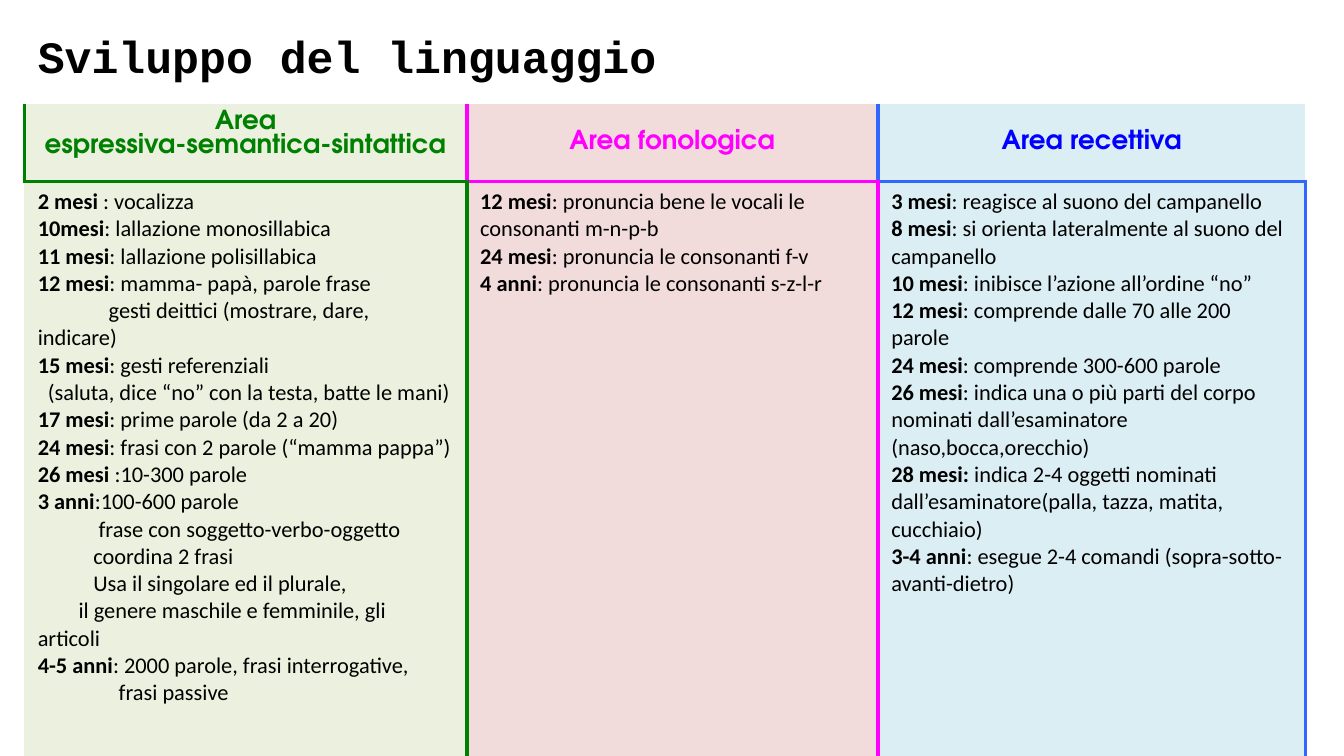
from typing import NamedTuple

from lxml.etree import SubElement
from pptx import Presentation
from pptx.dml.color import RGBColor as Rgb
from pptx.enum.text import MSO_ANCHOR as Anchor, MSO_AUTO_SIZE as AutoSize, PP_ALIGN as Align
from pptx.oxml.ns import qn
from pptx.util import Cm, Pt

COLORS = {
    "black": "000000",
    "green": "008000",
    "magenta": "FF00FF",
    "blue": "0000FF",
    "blue_edge": "3366FF",
    "pale_green": "EBF1DE",
    "pale_pink": "F2DCDB",
    "pale_blue": "DBEEF4",
}
NO_STYLE = "{2D5ABB26-0587-4C30-8999-92F81FD0307C}"
SIDES = {"left": "a:lnL", "right": "a:lnR", "top": "a:lnT", "bottom": "a:lnB"}
EDGE_WIDTH = Pt(2.25)
LEFT = Cm(0.46)


class Entry(NamedTuple):
    age: str
    text: str
    indent: float = 0


class Area(NamedTuple):
    heading: str
    width: float
    ink: str
    edge: str
    fill: str
    anchor: Anchor
    entries: list[Entry]


AREAS = [
    Area("Area\nespressiva-semantica-sintattica", 8.36, "green", "green", "pale_green", Anchor.TOP, [
        Entry("2 mesi ", ": vocalizza"),
        Entry("10mesi", ": lallazione monosillabica"),
        Entry("11 mesi", ": lallazione polisillabica"),
        Entry("12 mesi", ": mamma- papà, parole frase"),
        Entry("", "gesti deittici (mostrare, dare, indicare)", 1.34),
        Entry("15 mesi", ": gesti referenziali"),
        Entry("", "(saluta, dice “no” con la testa, batte le mani)", 0.19),
        Entry("17 mesi", ": prime parole (da 2 a 20)"),
        Entry("24 mesi", ": frasi con 2 parole (“mamma pappa”)"),
        Entry("26 mesi ", ":10-300 parole"),
        Entry("3 anni", ":100-600 parole"),
        Entry("", "frase con soggetto-verbo-oggetto", 1.15),
        Entry("", "coordina 2 frasi", 1.05),
        Entry("", "Usa il singolare ed il plurale,", 1.05),
        Entry("", "il genere maschile e femminile, gli articoli", 0.77),
        Entry("4-5 anni", ": 2000 parole, frasi interrogative,"),
        Entry("", "frasi passive", 1.53),
    ]),
    Area("Area fonologica", 7.77, "magenta", "magenta", "pale_pink", Anchor.MIDDLE, [
        Entry("12 mesi", ": pronuncia bene le vocali le consonanti m-n-p-b"),
        Entry("24 mesi", ": pronuncia le consonanti f-v"),
        Entry("4 anni", ": pronuncia le consonanti s-z-l-r"),
    ]),
    Area("Area recettiva", 8.08, "blue", "blue_edge", "pale_blue", Anchor.MIDDLE, [
        Entry("3 mesi", ": reagisce al suono del campanello"),
        Entry("8 mesi", ": si orienta lateralmente al suono del campanello"),
        Entry("10 mesi", ": inibisce l’azione all’ordine “no”"),
        Entry("12 mesi", ": comprende dalle 70 alle 200 parole"),
        Entry("24 mesi", ": comprende 300-600 parole"),
        Entry("26 mesi", ": indica una o più parti del corpo nominati dall’esaminatore "
              "(naso,bocca,orecchio)"),
        Entry("28 mesi: ", "indica 2-4 oggetti nominati dall’esaminatore"
              "(palla, tazza, matita, cucchiaio)"),
        Entry("3-4 anni", ": esegue 2-4 comandi (sopra-sotto-avanti-dietro)"),
    ]),
]


def set_font(font, name: str, size: float, color: str, bold: bool) -> None:
    font.name = name
    font.size = Pt(size)
    font.bold = bold
    font.color.rgb = Rgb.from_string(COLORS[color])


def format_cell(cell, fill: str, edges: dict[str, str | None]) -> None:
    properties = cell._tc.get_or_add_tcPr()
    for side, tag in SIDES.items():
        color = edges.get(side)
        line = SubElement(properties, qn(tag), w=str(EDGE_WIDTH if color else 0))
        if color:
            solid = SubElement(line, qn("a:solidFill"))
            SubElement(solid, qn("a:srgbClr"), val=COLORS[color])
        else:
            SubElement(line, qn("a:noFill"))
    cell.fill.solid()
    cell.fill.fore_color.rgb = Rgb.from_string(COLORS[fill])


def write_heading(cell, area: Area) -> None:
    cell.vertical_anchor = area.anchor
    cell.text_frame.text = area.heading
    for paragraph in cell.text_frame.paragraphs:
        paragraph.alignment = Align.CENTER
        set_font(paragraph.font, "TeX Gyre Adventor", 14, area.ink, True)


def write_entries(cell, entries: list[Entry]) -> None:
    frame = cell.text_frame
    for index, entry in enumerate(entries):
        paragraph = frame.add_paragraph() if index else frame.paragraphs[0]
        if entry.indent:
            properties = paragraph._p.get_or_add_pPr()
            properties.set("marL", "0")
            properties.set("indent", str(Cm(entry.indent)))
        for text, bold in ((entry.age, True), (entry.text, False)):
            if text:
                run = paragraph.add_run()
                run.text = text
                set_font(run.font, "Calibri", 12, "black", bold)


def add_title(slide, text: str) -> None:
    title = slide.shapes.title
    title.left, title.top, title.width, title.height = LEFT, Cm(0.41), Cm(15.44), Cm(1.27)
    frame = title.text_frame
    frame.text = text
    frame.auto_size = AutoSize.NONE
    frame.vertical_anchor = Anchor.MIDDLE
    paragraph = frame.paragraphs[0]
    paragraph.alignment = Align.LEFT
    set_font(paragraph.font, "Courier New", 24, "black", True)


def add_area_table(slide, areas: list[Area]) -> None:
    heights = [Cm(1.47), Cm(10.9)]
    width = Cm(sum(area.width for area in areas))
    table = slide.shapes.add_table(2, len(areas), LEFT, Cm(1.96), width, sum(heights)).table
    table.first_row = table.horz_banding = False
    table._tbl.tblPr.find(qn("a:tableStyleId")).text = NO_STYLE
    for row, height in zip(table.rows, heights):
        row.height = height
    edges = [None, *(area.edge for area in areas), None]
    for column, area in enumerate(areas):
        previous, own, following = edges[column:column + 3]
        table.columns[column].width = Cm(area.width)
        heading, body = table.cell(0, column), table.cell(1, column)
        write_heading(heading, area)
        write_entries(body, area.entries)
        format_cell(heading, area.fill, {"left": own, "right": following, "bottom": own})
        format_cell(body, area.fill, {"left": previous, "right": own, "top": own})


def main() -> None:
    presentation = Presentation()
    presentation.slide_width, presentation.slide_height = Cm(25.4), Cm(14.29)
    slide = presentation.slides.add_slide(presentation.slide_layouts[5])
    add_area_table(slide, AREAS)
    add_title(slide, "Sviluppo del linguaggio")
    presentation.save("out.pptx")


if __name__ == "__main__":
    main()
